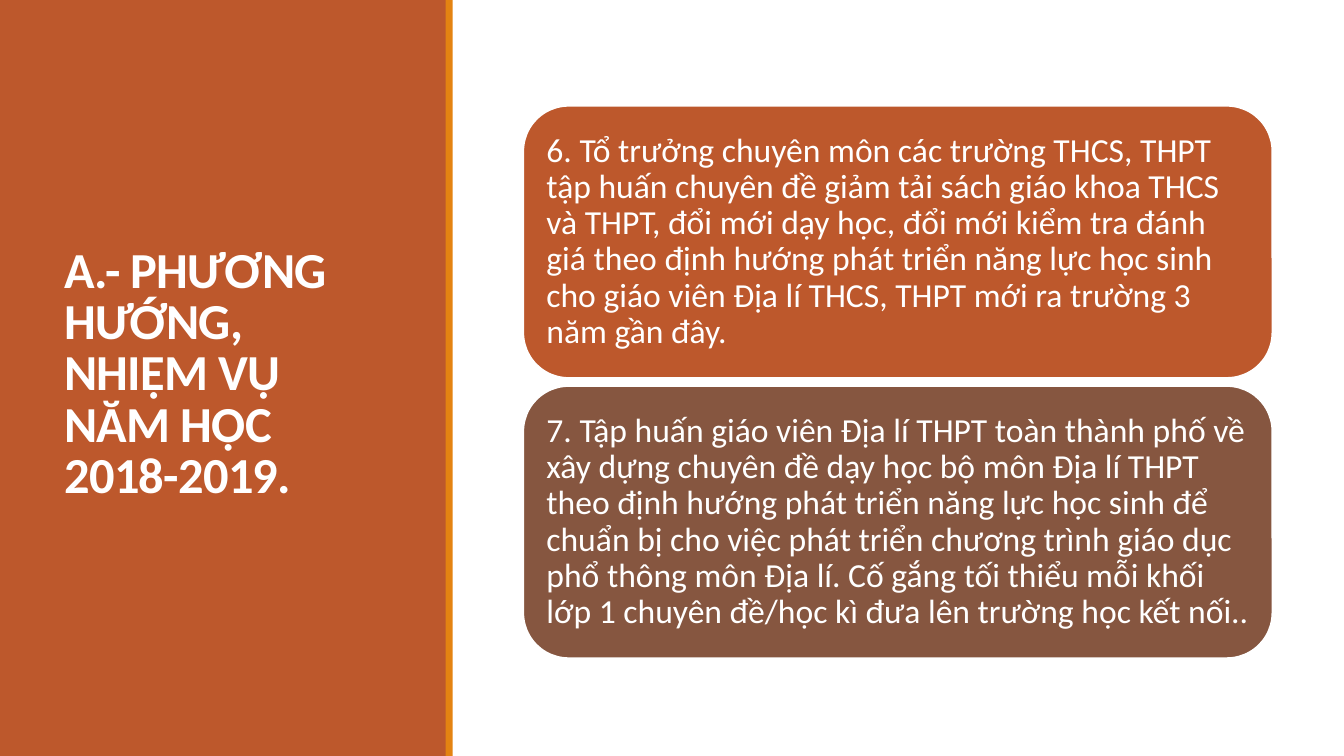
from pptx import Presentation
from pptx.dml.color import RGBColor
from pptx.enum import shapes, text
from pptx.util import Inches, Pt

WHITE = RGBColor(0xFF, 0xFF, 0xFF)
RUST = RGBColor(0xBD, 0x58, 0x2C)
ORANGE = RGBColor(0xE4, 0x83, 0x12)
BROWN = RGBColor(0x86, 0x56, 0x40)

TITLE = "A.- PHƯƠNG HƯỚNG, NHIỆM VỤ NĂM HỌC 2018-2019."
TASKS = [
    ("6. Tổ trưởng chuyên môn các trường THCS, THPT tập huấn chuyên đề giảm tải "
     "sách giáo khoa THCS và THPT, đổi mới dạy học, đổi mới kiểm tra đánh giá theo "
     "định hướng phát triển năng lực học sinh cho giáo viên Địa lí THCS, THPT mới "
     "ra trường 3 năm gần đây.", RUST),
    ("7. Tập huấn giáo viên Địa lí THPT toàn thành phố về xây dựng chuyên đề dạy "
     "học bộ môn Địa lí THPT theo định hướng phát triển năng lực học sinh để chuẩn "
     "bị cho việc phát triển chương trình giáo dục phổ thông môn Địa lí. Cố gắng "
     "tối thiểu mỗi khối lớp 1 chuyên đề/học kì đưa lên trường học kết nối..", BROWN),
]


def add_block(page, kind, left, top, width, height, color):
    block = page.shapes.add_shape(
        kind, Inches(left), Inches(top), Inches(width), Inches(height))
    block.shadow.inherit = False
    block.fill.solid()
    block.fill.fore_color.rgb = color
    block.line.fill.background()
    return block


def write_text(box, words, size, spacing, bold=False):
    """Fill a box with one white, left-aligned, vertically centred paragraph."""
    frame = box.text_frame
    frame.word_wrap = True
    frame.vertical_anchor = text.MSO_ANCHOR.MIDDLE
    para = frame.paragraphs[0]
    para.text = words
    para.alignment = text.PP_ALIGN.LEFT
    para.line_spacing = spacing
    para.font.name = "Calibri"
    para.font.size = Pt(size)
    para.font.bold = bold
    para.font.color.rgb = WHITE
    return para


def add_title_panel(page, left, top, width, height):
    rectangle = shapes.MSO_SHAPE.RECTANGLE
    add_block(page, rectangle, left, top, width, height, RUST)
    title = page.shapes.add_textbox(
        Inches(left + 0.54), Inches(top + 0.57), Inches(3.37), Inches(6.31))
    para = write_text(title, TITLE, 36, 0.85, bold=True)
    para.runs[0].font._element.set("spc", "-50")
    add_block(page, rectangle, left + width - 0.01, top, 0.07, height, ORANGE)


def add_task_cards(page, left, top, width, height, gap=0.08):
    card_height = (height - gap * (len(TASKS) - 1)) / len(TASKS)
    for index, (words, color) in enumerate(TASKS):
        card = add_block(page, shapes.MSO_SHAPE.ROUNDED_RECTANGLE, left,
                         top + index * (card_height + gap), width, card_height, color)
        card.line.color.rgb = WHITE
        card.line.width = Pt(1.25)
        frame = card.text_frame
        frame.margin_left = frame.margin_right = Inches(0.1)
        frame.margin_top = frame.margin_bottom = Inches(0.1)
        write_text(card, words, 24, 0.9)


def main():
    deck = Presentation()
    deck.slide_width, deck.slide_height = Inches(13.33), Inches(7.5)
    page = deck.slides.add_slide(deck.slide_layouts[6])
    add_title_panel(page, 0, 0, 4.43, 7.5)
    add_task_cards(page, 5.19, 1.05, 7.43, 5.48)
    deck.save("out.pptx")


if __name__ == "__main__":
    main()
